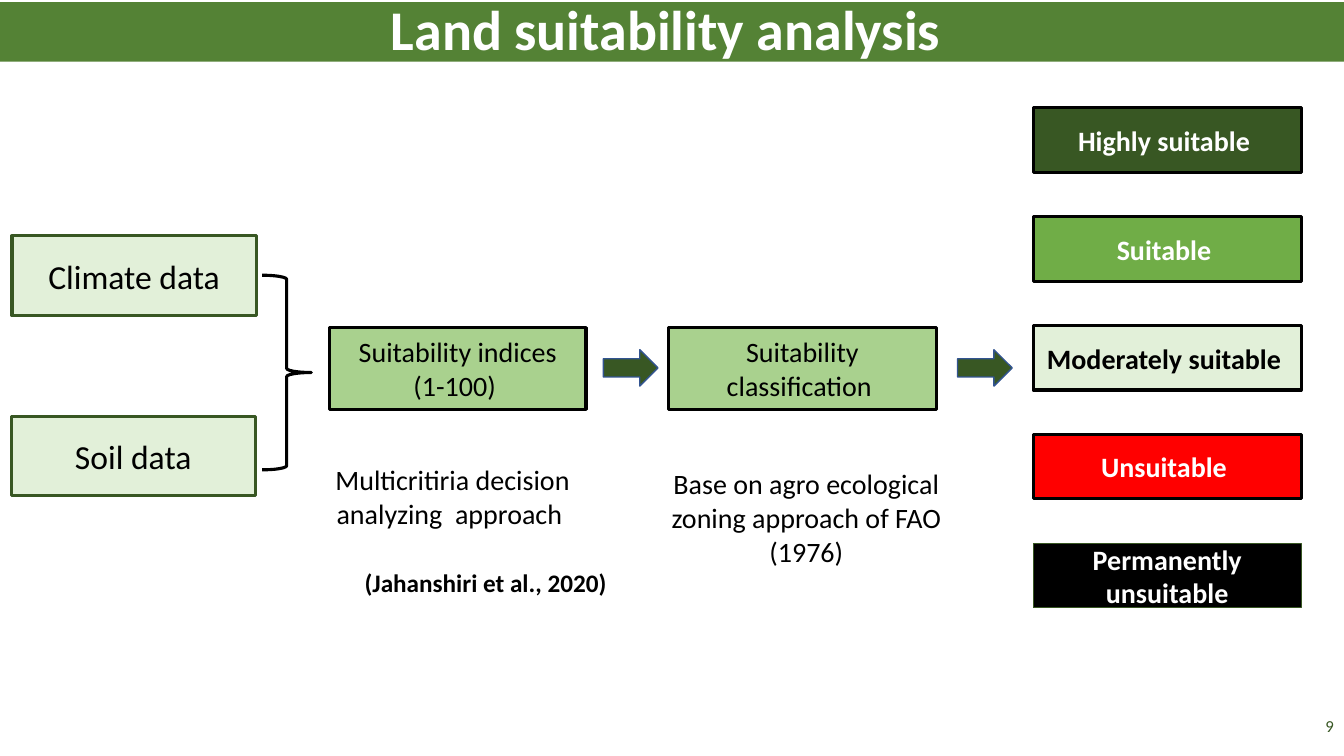
from pptx import Presentation
from pptx.dml.color import RGBColor
from pptx.enum.shapes import MSO_SHAPE
from pptx.enum.text import MSO_ANCHOR, PP_ALIGN
from pptx.util import Pt

BLACK = RGBColor(0x00, 0x00, 0x00)
WHITE = RGBColor(0xFF, 0xFF, 0xFF)
RED = RGBColor(0xFF, 0x00, 0x00)
DARK_GREEN = RGBColor(0x38, 0x57, 0x23)
TITLE_GREEN = RGBColor(0x54, 0x82, 0x35)
GREEN = RGBColor(0x70, 0xAD, 0x47)
LIGHT_GREEN = RGBColor(0xA9, 0xD1, 0x8E)
PALE_GREEN = RGBColor(0xE2, 0xF0, 0xD9)
ARROW_EDGE = RGBColor(0x32, 0x54, 0x91)


class SuitabilityPage:
    """Holds the text style and the page being drawn."""

    font_name = "Calibri"

    def __init__(self, page):
        self.page = page

    def set_text(self, box, text, size, color, bold=False,
                 align=PP_ALIGN.CENTER, anchor=MSO_ANCHOR.MIDDLE):
        frame = box.text_frame
        frame.word_wrap = True
        frame.vertical_anchor = anchor
        frame.text = text
        for para in frame.paragraphs:
            para.alignment = align
            for span in para.runs:
                span.font.name = self.font_name
                span.font.size = Pt(size)
                span.font.bold = bold
                span.font.color.rgb = color

    def shape(self, kind, place, fill=None, edge=None, weight=2.25):
        shape = self.page.shapes.add_shape(kind, *map(Pt, place))
        shape.shadow.inherit = False
        if fill is None:
            shape.fill.background()
        else:
            shape.fill.solid()
            shape.fill.fore_color.rgb = fill
        if edge is None:
            shape.line.fill.background()
        else:
            shape.line.color.rgb = edge
            shape.line.width = Pt(weight)
        return shape

    def panel(self, text, place, fill, edge=None, weight=2.25, size=20,
              color=BLACK, bold=False):
        box = self.shape(MSO_SHAPE.RECTANGLE, place, fill, edge, weight)
        self.set_text(box, text, size, color, bold)
        return box

    def arrow(self, left):
        self.shape(MSO_SHAPE.RIGHT_ARROW, (left, 249.8, 39, 26),
                   DARK_GREEN, ARROW_EDGE, 1)

    def label(self, text, place, size, color=BLACK, **style):
        box = self.page.shapes.add_textbox(*map(Pt, place))
        self.set_text(box, text, size, color, **style)
        return box


def main():
    deck = Presentation()
    deck.slide_width, deck.slide_height = Pt(960), Pt(540)
    page = SuitabilityPage(deck.slides.add_slide(deck.slide_layouts[6]))

    # Title band
    title = page.panel("Land suitability analysis ", (0, 1.5, 960, 42.5),
                       TITLE_GREEN, size=40, color=WHITE, bold=True)
    title.text_frame.paragraphs[0].line_spacing = 0.9

    # Input data, joined by a brace
    for text, left, top in (("Climate data", 8.6, 168.4),
                            ("Soil data", 8, 297.2)):
        page.panel(text, (left, top, 174.4, 57), PALE_GREEN, DARK_GREEN, size=24)
    page.shape(MSO_SHAPE.RIGHT_BRACE, (187.2, 196.6, 35.2, 139), edge=BLACK)

    # Two steps, each followed by an arrow
    page.panel("Suitability indices\n(1-100) ", (235.4, 234, 183.2, 58.5),
               LIGHT_GREEN, BLACK)
    page.arrow(431)
    page.panel("Suitability classification ", (477.4, 234, 191.5, 58.5),
               LIGHT_GREEN, BLACK)
    page.arrow(684)

    # Method notes under the steps
    page.panel("Multicritiria decision analyzing  approach  ",
               (231.8, 330, 183, 49), WHITE)
    page.label("Base on agro ecological zoning approach of FAO (1976)",
               (453.6, 330, 244.8, 80), 20, anchor=MSO_ANCHOR.TOP)
    citation = page.label("(Jahanshiri et al., 2020)", (253.4, 400.3, 196.6, 31),
                          18, bold=True, align=PP_ALIGN.LEFT,
                          anchor=MSO_ANCHOR.TOP)
    citation.text_frame.paragraphs[0].line_spacing = 1.07
    citation.text_frame.paragraphs[0].space_after = Pt(8)

    # Suitability classes, best to worst
    classes = (
        ("Highly suitable ", DARK_GREEN, WHITE, BLACK, 2.25),
        ("Suitable ", GREEN, WHITE, BLACK, 2.25),
        ("Moderately suitable ", PALE_GREEN, BLACK, BLACK, 2.25),
        ("Unsuitable ", RED, WHITE, BLACK, 2.25),
        ("Permanently unsuitable", BLACK, WHITE, DARK_GREEN, 0.75),
    )
    for rank, (text, fill, color, edge, weight) in enumerate(classes):
        page.panel(text, (738, 77 + 77.8 * rank, 191.5, 46), fill, edge, weight,
                   color=color, bold=True)

    # Page number
    page.label("9", (743.8, 504, 216, 28.8), 12, DARK_GREEN,
               align=PP_ALIGN.RIGHT)

    deck.save("out.pptx")


if __name__ == "__main__":
    main()
